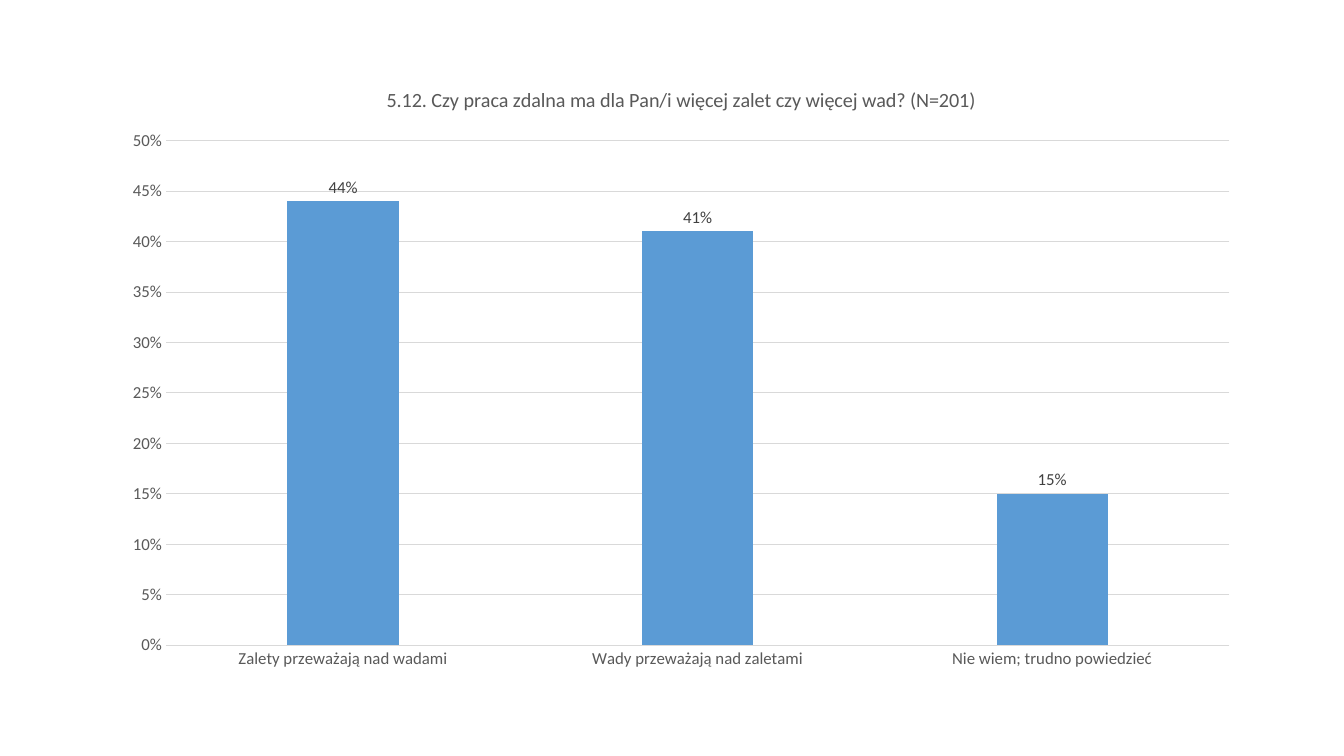
from dataclasses import dataclass
from typing import Any

import pptx
import pptx.chart.data
import pptx.dml.color
import pptx.enum.chart
import pptx.util

COLORS = {"bar": "5B9BD5", "text": "595959", "label": "404040", "grid": "D9D9D9"}
FONT_NAME = "Calibri"
TITLE = "5.12. Czy praca zdalna ma dla Pan/i więcej zalet czy więcej wad? (N=201)"


@dataclass(frozen=True)
class Answer:
    text: str
    share: float


ANSWERS = [
    Answer("Zalety przeważają nad wadami", 0.44),
    Answer("Wady przeważają nad zaletami", 0.41),
    Answer("Nie wiem; trudno powiedzieć", 0.15),
]

NO_TICK = pptx.enum.chart.XL_TICK_MARK.NONE
AXIS_FORMAT = {"major_tick_mark": NO_TICK, "minor_tick_mark": NO_TICK}
VALUE_AXIS_FORMAT = {
    "minimum_scale": 0,
    "maximum_scale": 0.5,
    "major_unit": 0.05,
    "has_major_gridlines": True,
}
PLOT_FORMAT = {
    "gap_width": 219,
    "overlap": -27,
    "vary_by_categories": False,
    "has_data_labels": True,
}
PERCENT_FORMAT = {"number_format": "0%", "number_format_is_linked": False}
LABEL_FORMAT = {
    "show_value": True,
    "position": pptx.enum.chart.XL_LABEL_POSITION.OUTSIDE_END,
    **PERCENT_FORMAT,
}


def apply_format(target: Any, values: dict[str, Any]) -> None:
    for name, value in values.items():
        setattr(target, name, value)


def color(name: str) -> pptx.dml.color.RGBColor:
    return pptx.dml.color.RGBColor.from_string(COLORS[name])


def style_font(font: Any, size: float, color_name: str) -> None:
    apply_format(font, {"name": FONT_NAME, "size": pptx.util.Pt(size), "bold": False})
    font.color.rgb = color(color_name)


def style_line(line: Any) -> None:
    line.color.rgb = color("grid")
    line.width = pptx.util.Pt(0.75)


def add_answer_chart(slide: Any) -> Any:
    data = pptx.chart.data.CategoryChartData(number_format="0%")
    data.categories = [answer.text for answer in ANSWERS]
    data.add_series("Series 1", [answer.share for answer in ANSWERS])
    box = [pptx.util.Inches(length) for length in (1.09, 0.64, 11.33, 6.12)]
    chart_type = pptx.enum.chart.XL_CHART_TYPE.COLUMN_CLUSTERED
    return slide.shapes.add_chart(chart_type, *box, data).chart


def style_chart(chart: Any) -> None:
    # Title
    chart.has_legend = False
    style_font(chart.font, 12, "text")
    title_frame = chart.chart_title.text_frame
    title_frame.text = TITLE
    style_font(title_frame.paragraphs[0].runs[0].font, 14.4, "text")

    # Axes
    for axis in (chart.category_axis, chart.value_axis):
        apply_format(axis, AXIS_FORMAT)
        style_font(axis.tick_labels.font, 12, "text")
    style_line(chart.category_axis.format.line)
    apply_format(chart.value_axis, VALUE_AXIS_FORMAT)
    apply_format(chart.value_axis.tick_labels, PERCENT_FORMAT)
    chart.value_axis.format.line.fill.background()
    style_line(chart.value_axis.major_gridlines.format.line)

    # Columns and their labels
    plot = chart.plots[0]
    apply_format(plot, PLOT_FORMAT)
    apply_format(plot.data_labels, LABEL_FORMAT)
    style_font(plot.data_labels.font, 12, "label")
    series = plot.series[0]
    series.invert_if_negative = False
    series.format.fill.solid()
    series.format.fill.fore_color.rgb = color("bar")


def main() -> None:
    presentation = pptx.Presentation()
    presentation.slide_width = pptx.util.Inches(13.33)
    presentation.slide_height = pptx.util.Inches(7.5)
    slide = presentation.slides.add_slide(presentation.slide_layouts[6])
    style_chart(add_answer_chart(slide))
    presentation.save("out.pptx")


if __name__ == "__main__":
    main()
